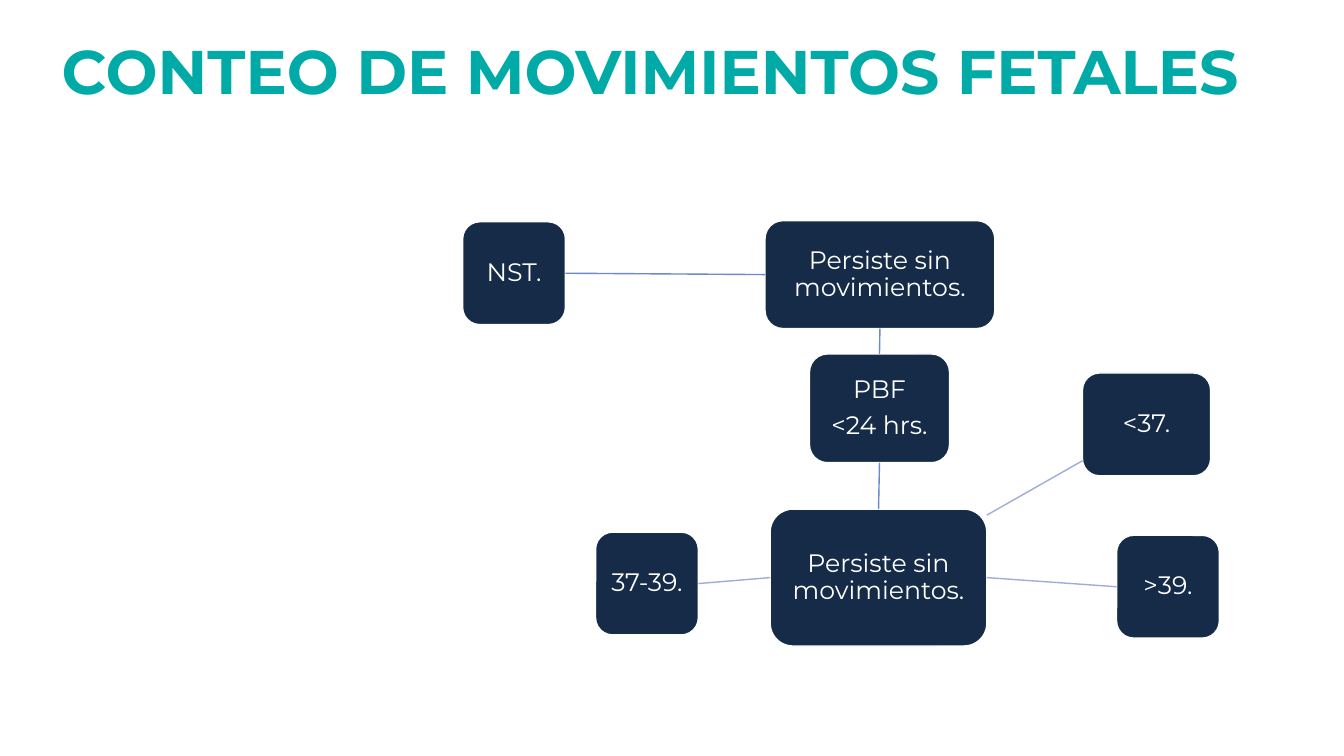
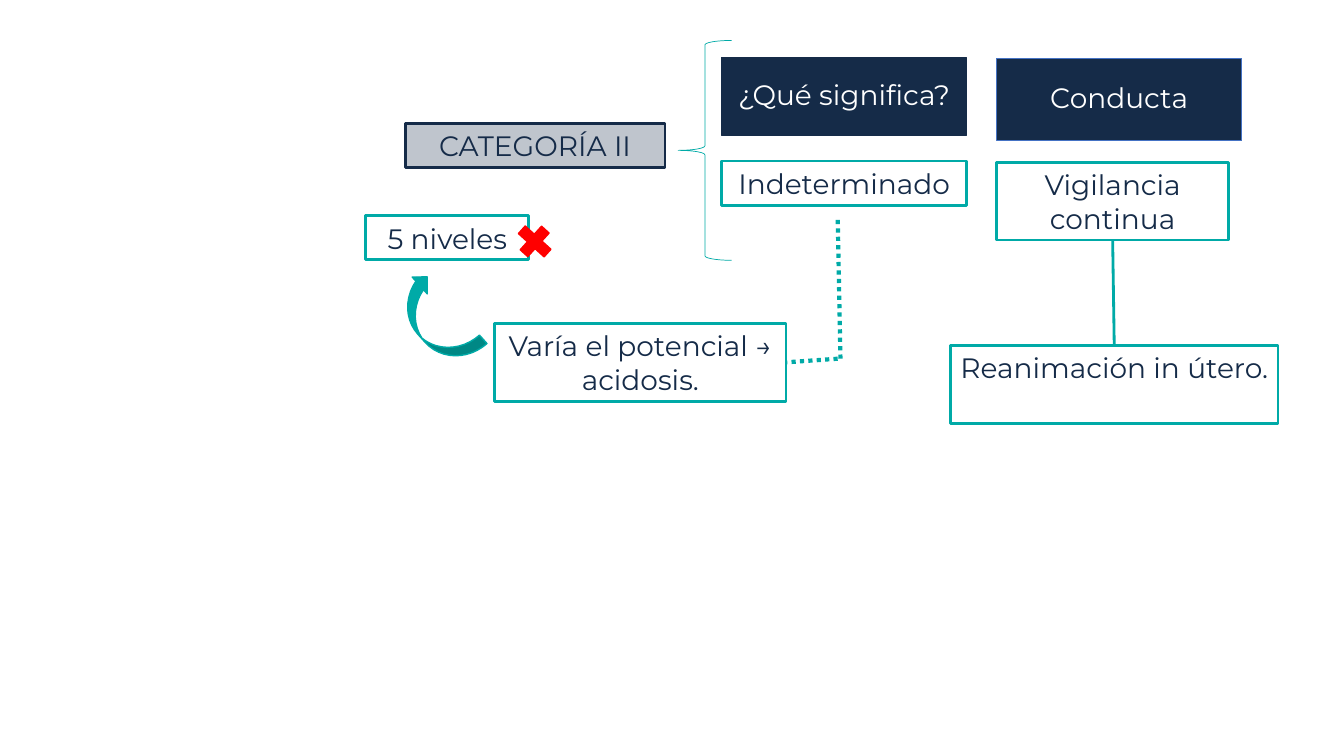
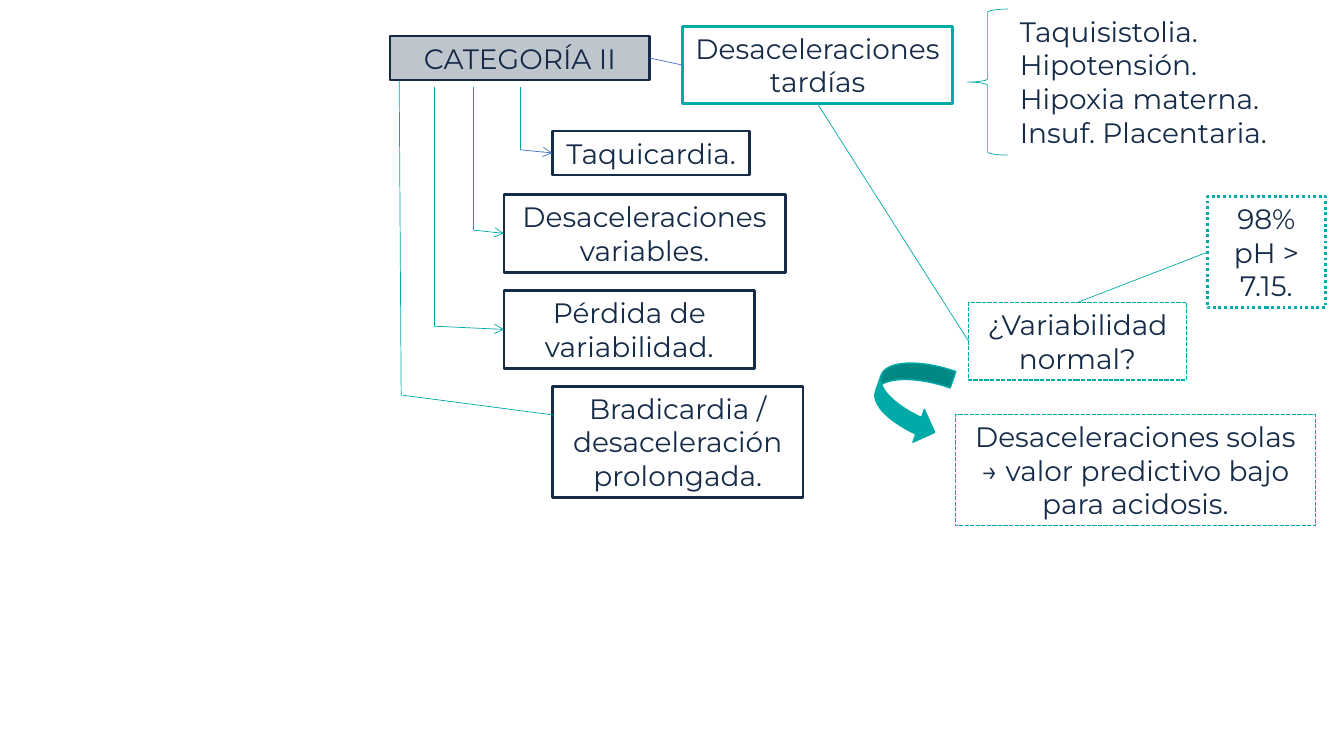
from lxml.etree import SubElement
from pptx import Presentation
from pptx.dml.color import RGBColor
from pptx.enum.dml import MSO_LINE
from pptx.enum.shapes import MSO_CONNECTOR, MSO_SHAPE
from pptx.enum.text import MSO_ANCHOR, PP_ALIGN
from pptx.oxml.ns import qn
from pptx.util import Cm, Pt

NAVY, TEAL, BLUE, WHITE, RED = "152B48", "00AAA7", "4472C4", "FFFFFF", "FF0000"
LINK, BRANCH = "6D89CB", "9EADD8"
FONT = "Montserrat"
TOP, LEFT, BOTTOM, RIGHT = range(4)
TITLE_ONLY, BLANK = 5, 6


def color(value):
    return RGBColor.from_string(value)


def text_height(lines):
    return 0.26 + 0.85 * lines


def write_text(shape, text, size=20, fill=NAVY, bold=False, align=PP_ALIGN.CENTER,
               anchor=MSO_ANCHOR.TOP, spacing=1.0, after=0, margins=(0.25, 0.13)):
    frame = shape.text_frame
    frame.text = text
    frame.word_wrap = True
    frame.vertical_anchor = anchor
    frame.margin_left = frame.margin_right = Cm(margins[0])
    frame.margin_top = frame.margin_bottom = Cm(margins[1])
    for paragraph in frame.paragraphs:
        paragraph.alignment = align
        paragraph.line_spacing = spacing
        paragraph.space_after = Pt(after)
        paragraph.font.name = FONT
        paragraph.font.size = Pt(size)
        paragraph.font.bold = bold
        paragraph.font.color.rgb = color(fill)


class Deck:
    """Hold the shared style and the slide being drawn."""

    def __init__(self):
        self.presentation = Presentation()
        self.presentation.slide_width = Cm(33.87)
        self.presentation.slide_height = Cm(19.05)
        self.slide = None

    def add_slide(self, title=None):
        layout = self.presentation.slide_layouts[TITLE_ONLY if title else BLANK]
        self.slide = self.presentation.slides.add_slide(layout)
        if title:
            shape = self.slide.shapes.title
            shape.left, shape.top, shape.width, shape.height = map(Cm, (1.3, 0.05, 31.3, 3.68))
            write_text(shape, title, size=44, fill=TEAL, bold=True, align=PP_ALIGN.LEFT,
                       anchor=MSO_ANCHOR.MIDDLE, spacing=0.9)

    def shape(self, kind, left, top, width, height, fill=None, line=TEAL, weight=1,
              dash=None, rotation=0):
        shape = self.slide.shapes.add_shape(kind, Cm(left), Cm(top), Cm(width), Cm(height))
        shape.shadow.inherit = False
        shape.rotation = rotation
        if fill:
            shape.fill.solid()
            shape.fill.fore_color.rgb = color(fill)
        else:
            shape.fill.background()
        shape.line.color.rgb = color(line)
        shape.line.width = Pt(weight)
        if dash:
            shape.line.dash_style = dash
        return shape

    def box(self, text, left, top, width, lines, weight=2, **look):
        shape = self.shape(MSO_SHAPE.RECTANGLE, left, top, width, text_height(lines),
                           weight=weight, **look)
        write_text(shape, text)
        return shape

    def category(self, left, top):
        shape = self.box("CATEGORÍA II", left, top, 6.55, 1, fill=NAVY, line=NAVY)
        tint = shape.element.spPr.find(qn("a:solidFill"))[0]
        SubElement(tint, qn("a:alpha")).set("val", "27000")
        return shape

    def header(self, text, left, top, height, line):
        shape = self.shape(MSO_SHAPE.RECTANGLE, left, top, 6.17, height, NAVY, line, 0.5)
        write_text(shape, text, fill=WHITE, anchor=MSO_ANCHOR.MIDDLE, spacing=0.9, after=7)

    def node(self, text, left, top, width=2.59, height=2.59):
        shape = self.shape(MSO_SHAPE.ROUNDED_RECTANGLE, left, top, width, height, NAVY, WHITE)
        write_text(shape, text, size=18, fill=WHITE, anchor=MSO_ANCHOR.MIDDLE, spacing=0.9,
                   after=6, margins=(0.13, 0.13))
        return shape

    def brace(self, left, top, width, height):
        self.shape(MSO_SHAPE.LEFT_BRACE, left, top, width, height, weight=0.5)

    def text_list(self, text, left, top, width, lines):
        shape = self.slide.shapes.add_textbox(Cm(left), Cm(top), Cm(width),
                                              Cm(text_height(lines)))
        write_text(shape, text, align=PP_ALIGN.LEFT)

    def connect(self, start, end, line=TEAL, weight=0.5, dash=None, arrow=False):
        """Draw a line between ends given as (x, y) or as (shape, side)."""
        glued = [not isinstance(point[0], (int, float)) for point in (start, end)]
        x1, y1 = (0, 0) if glued[0] else start
        x2, y2 = (0, 0) if glued[1] else end
        connector = self.slide.shapes.add_connector(
            MSO_CONNECTOR.STRAIGHT, Cm(x1), Cm(y1), Cm(x2), Cm(y2))
        if glued[0]:
            connector.begin_connect(*start)
        if glued[1]:
            connector.end_connect(*end)
        connector.line.color.rgb = color(line)
        connector.line.width = Pt(weight)
        if dash:
            connector.line.dash_style = dash
        properties = connector.element.spPr
        if arrow:
            SubElement(properties.find(qn("a:ln")), qn("a:tailEnd")).set("type", "arrow")
        SubElement(properties, qn("a:effectLst"))


def build_movement_count(deck):
    deck.add_slide("CONTEO DE MOVIMIENTOS FETALES")
    test = deck.node("NST.", 11.66, 5.59)
    first = deck.node("Persiste sin movimientos.", 19.28, 5.56, 5.79, 2.72)
    profile = deck.node("PBF\n<24 hrs.", 20.4, 8.92, 3.53, 2.74)
    second = deck.node("Persiste sin movimientos.", 19.41, 12.83, 5.46, 3.45)
    middle = deck.node("37-39.", 15.01, 13.41)
    late = deck.node(">39.", 28.14, 13.49)
    deck.node("<37.", 27.28, 9.4, 3.23)
    for start, end, line in (
        ((test, RIGHT), (first, LEFT), LINK),
        ((first, BOTTOM), (profile, TOP), LINK),
        ((profile, BOTTOM), (second, TOP), LINK),
        ((second, LEFT), (middle, RIGHT), BRANCH),
        ((second, RIGHT), (late, LEFT), BRANCH),
        ((24.87, 12.98), (27.28, 11.61), BRANCH),
    ):
        deck.connect(start, end, line, 1)


def build_meaning(deck):
    deck.add_slide()
    deck.category(10.21, 3.12)
    deck.header("¿Qué significa?", 18.19, 1.45, 1.96, NAVY)
    deck.header("Conducta", 25.12, 1.47, 2.08, BLUE)
    deck.box("Indeterminado", 18.19, 4.06, 6.17, 1)
    watch = deck.box("Vigilancia continua", 25.12, 4.09, 5.84, 2)
    deck.brace(17.09, 1.02, 1.35, 5.54)
    revive = deck.box("Reanimación in útero.", 23.95, 8.71, 8.26, 2)
    deck.connect((watch, BOTTOM), (revive, TOP), weight=2)
    potential = deck.box("Varía el potencial → acidosis.", 12.47, 8.15, 7.34, 2)
    dots = {"weight": 3, "dash": MSO_LINE.ROUND_DOT}
    deck.connect((21.11, 9.04), (potential, RIGHT), **dots)
    deck.connect((21.18, 9.04), (21.11, 5.44), **dots)
    deck.box("5 niveles", 9.22, 5.44, 4.11, 1)
    deck.shape(MSO_SHAPE.CURVED_DOWN_ARROW, 9.73, 7.52, 2.54, 1.14, TEAL, rotation=228.1)
    deck.shape(MSO_SHAPE.MATH_PLUS, 12.88, 5.54, 1.19, 1.09, RED, RED, rotation=42.2)


def build_decelerations(deck):
    deck.add_slide()
    category = deck.category(9.83, 0.91)
    late = deck.box("Desaceleraciones tardías", 17.2, 0.66, 6.81, 2)
    deck.text_list("Taquisistolia.\nHipotensión.\nHipoxia materna.\nInsuf. Placentaria.",
                   25.45, 0.23, 7.09, 4)
    deck.brace(24.38, 0.23, 1.02, 3.68)
    dashes = {"weight": 1, "dash": MSO_LINE.SQUARE_DOT}
    variability = deck.box("¿Variabilidad normal?", 24.41, 7.62, 5.49, 2, **dashes)
    deck.box("Desaceleraciones solas → valor predictivo bajo para acidosis.",
             24.08, 10.44, 9.07, 3, **dashes)
    acidity = deck.box("98% pH > 7.15.", 30.43, 4.95, 2.97, 3, dash=MSO_LINE.ROUND_DOT)
    deck.shape(MSO_SHAPE.CURVED_RIGHT_ARROW, 22.05, 9.02, 1.75, 2.06, TEAL, rotation=19.1)
    deck.connect((category, RIGHT), (late, LEFT), BLUE)
    deck.connect((late, BOTTOM), (variability, LEFT))
    deck.connect((variability, TOP), (acidity, LEFT))
    for text, left, top, width, lines, drop, line in (
        ("Taquicardia.", 13.92, 3.3, 4.98, 1, 13.11, BLUE),
        ("Desaceleraciones variables.", 12.7, 4.9, 7.09, 2, 11.94, TEAL),
        ("Pérdida de variabilidad.", 12.7, 7.32, 6.32, 2, 10.95, TEAL),
    ):
        finding = deck.box(text, left, top, width, lines, line=NAVY)
        bend = top + text_height(lines) / 2 - 0.08
        deck.connect((drop, 2.18), (drop, bend))
        deck.connect((drop, bend), (finding, LEFT), line, arrow=True)
    deck.box("Bradicardia / desaceleración prolongada.", 13.92, 9.73, 6.32, 3, line=NAVY)
    deck.connect((10.06, 2.03), (10.11, 9.98))
    deck.connect((10.16, 9.96), (13.97, 10.46))


def main():
    deck = Deck()
    build_movement_count(deck)
    build_meaning(deck)
    build_decelerations(deck)
    deck.presentation.save("out.pptx")


if __name__ == "__main__":
    main()
